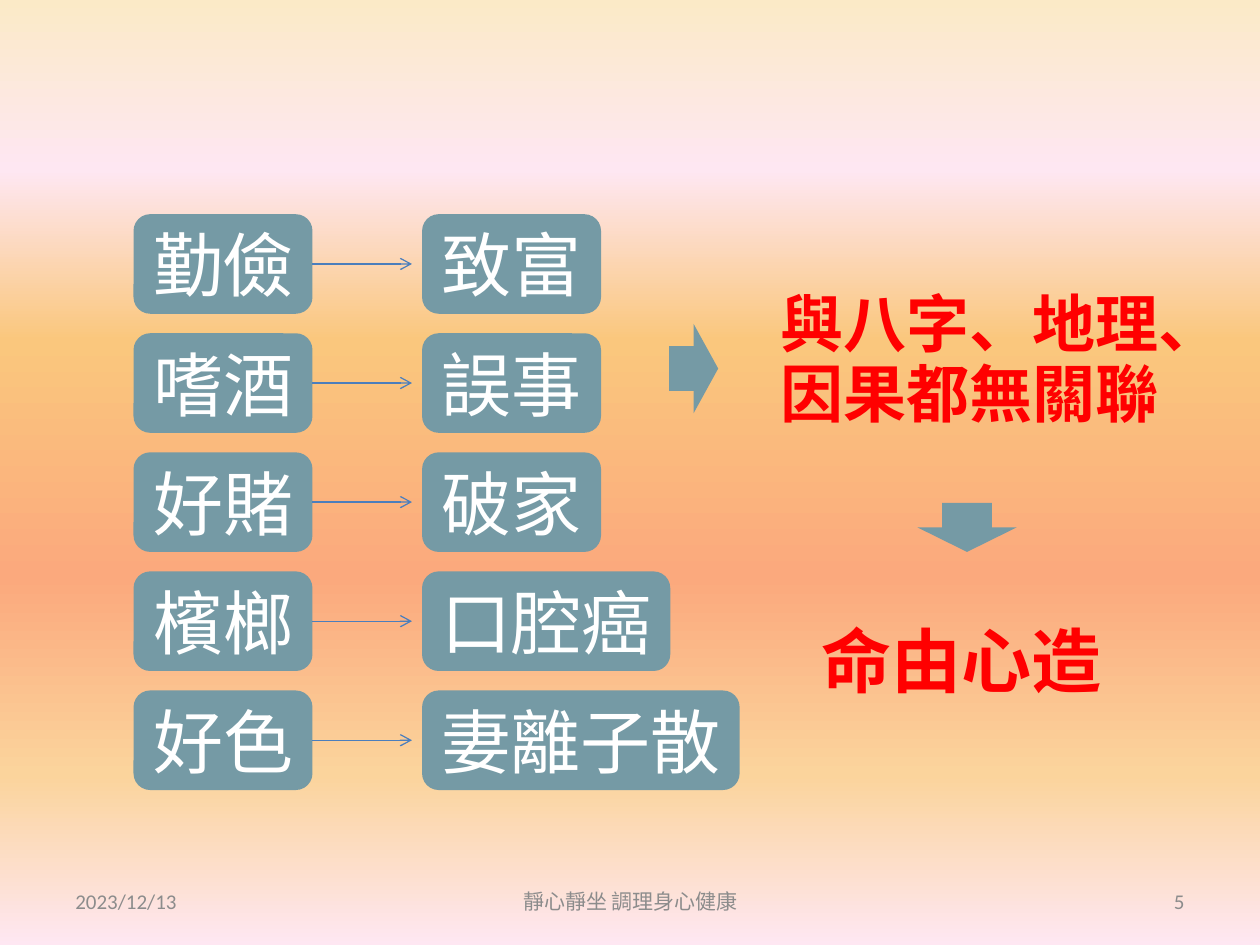
"""Build a slide on how habits, not fate, lead to their outcomes."""
from dataclasses import dataclass

from lxml.etree import SubElement
from pptx import Presentation
from pptx.dml.color import RGBColor
from pptx.enum.shapes import MSO_CONNECTOR, MSO_SHAPE
from pptx.enum.text import MSO_ANCHOR, PP_ALIGN
from pptx.oxml.ns import qn
from pptx.slide import Slide
from pptx.util import Inches, Pt

BACKGROUND = [(0, "FBEAC7"), (18, "FEE7F2"), (36, "FAC77D"),
              (61, "FBA97D"), (82, "FBD49C"), (100, "FEE7F2")]
HABITS = [("勤儉", "致富", 1.42), ("嗜酒", "誤事", 1.42), ("好賭", "破家", 1.42),
          ("檳榔", "口腔癌", 1.97), ("好色", "妻離子散", 2.52)]
ROW_TOP, ROW_STEP, ROW_HEIGHT = 1.7, 0.945, 0.79
HABIT_LEFT, HABIT_WIDTH = 1.06, 1.42
ARROW_END, OUTCOME_LEFT = 3.27, 3.35


def color(hex_code):
    return RGBColor.from_string(hex_code)


def write(frame, text, size=12, font="Calibri", east=None, ink="FFFFFF", bold=False,
          align=PP_ALIGN.LEFT, anchor=MSO_ANCHOR.MIDDLE, spacing=None):
    frame.word_wrap = True
    frame.vertical_anchor = anchor
    paragraph = frame.paragraphs[0]
    paragraph.alignment = align
    if spacing:
        paragraph.line_spacing = Pt(spacing)
    paragraph._p.get_or_add_pPr().set("hangingPunct", "1")
    run = paragraph.add_run()
    run.text = text
    run.font.size = Pt(size)
    run.font.bold = bold
    run.font.color.rgb = color(ink)
    run.font.name = font
    if east:
        SubElement(run._r.rPr, qn("a:ea"), typeface=east)


@dataclass
class Board:
    slide: Slide
    block: str = "759AA5"
    line: str = "4B7EBC"
    accent: str = "FF0000"
    muted: str = "8C8C8C"

    def backdrop(self, stops):
        fill = self.slide.background.fill
        fill.gradient()
        fill.gradient_angle = 270
        stop_list = self.slide._element.find(".//" + qn("a:gsLst"))
        for stop in list(stop_list):
            stop_list.remove(stop)
        for percent, hex_code in stops:
            stop = SubElement(stop_list, qn("a:gs"), pos=str(percent * 1000))
            SubElement(stop, qn("a:srgbClr"), val=hex_code)

    def shape(self, kind, left, top, width, height):
        shape = self.slide.shapes.add_shape(
            kind, Inches(left), Inches(top), Inches(width), Inches(height))
        shape.shadow.inherit = False
        shape.fill.solid()
        shape.fill.fore_color.rgb = color(self.block)
        shape.line.fill.background()
        return shape

    def card(self, text, left, top, width):
        card = self.shape(MSO_SHAPE.ROUNDED_RECTANGLE, left, top, width, ROW_HEIGHT)
        write(card.text_frame, text, size=40, align=PP_ALIGN.CENTER)
        return card

    def arrow(self, source, end_x, y):
        arrow = self.slide.shapes.add_connector(
            MSO_CONNECTOR.STRAIGHT, source.left + source.width, Inches(y),
            Inches(end_x), Inches(y))
        arrow.begin_connect(source, 3)
        arrow.line.color.rgb = color(self.line)
        arrow.line.width = Pt(0.75)
        SubElement(arrow.line._get_or_add_ln(), qn("a:tailEnd"), type="arrow")
        SubElement(arrow._element.spPr, qn("a:effectLst"))

    def text(self, text, left, top, width, height, **style):
        box = self.slide.shapes.add_textbox(
            Inches(left), Inches(top), Inches(width), Inches(height))
        write(box.text_frame, text, **style)

    def claim(self, text, left, top, width, height, font, **style):
        self.text(text, left, top, width, height, font=font, east=font,
                  ink=self.accent, bold=True, anchor=MSO_ANCHOR.TOP, **style)

    def footer(self, text, left, width, align):
        self.text(text, left, 6.95, width, 0.4, ink=self.muted, align=align)


def main():
    deck = Presentation()
    deck.slide_width, deck.slide_height = Inches(10), Inches(7.5)
    board = Board(deck.slides.add_slide(deck.slide_layouts[6]))
    board.backdrop(BACKGROUND)

    board.footer("2023/12/13", 0.5, 2.33, PP_ALIGN.LEFT)
    board.footer("靜心靜坐 調理身心健康", 3.42, 3.17, PP_ALIGN.CENTER)
    board.footer("5", 7.17, 2.33, PP_ALIGN.RIGHT)

    for row, (habit, outcome, outcome_width) in enumerate(HABITS):
        top = ROW_TOP + row * ROW_STEP
        habit_card = board.card(habit, HABIT_LEFT, top, HABIT_WIDTH)
        board.arrow(habit_card, ARROW_END, top + ROW_HEIGHT / 2)
        board.card(outcome, OUTCOME_LEFT, top, outcome_width)

    board.shape(MSO_SHAPE.RIGHT_ARROW, 5.31, 2.57, 0.39, 0.71)
    board.shape(MSO_SHAPE.DOWN_ARROW, 7.28, 3.99, 0.79, 0.39)
    board.claim("命由心造", 6.42, 4.85, 2.52, 0.77, "Noto Sans CJK JP", size=40)
    board.claim("與八字、地理、因果都無關聯", 6.1, 2.25, 3.54, 1.22,
                "Noto Sans CJK SC", size=36, spacing=40)
    deck.save("out.pptx")


if __name__ == "__main__":
    main()
